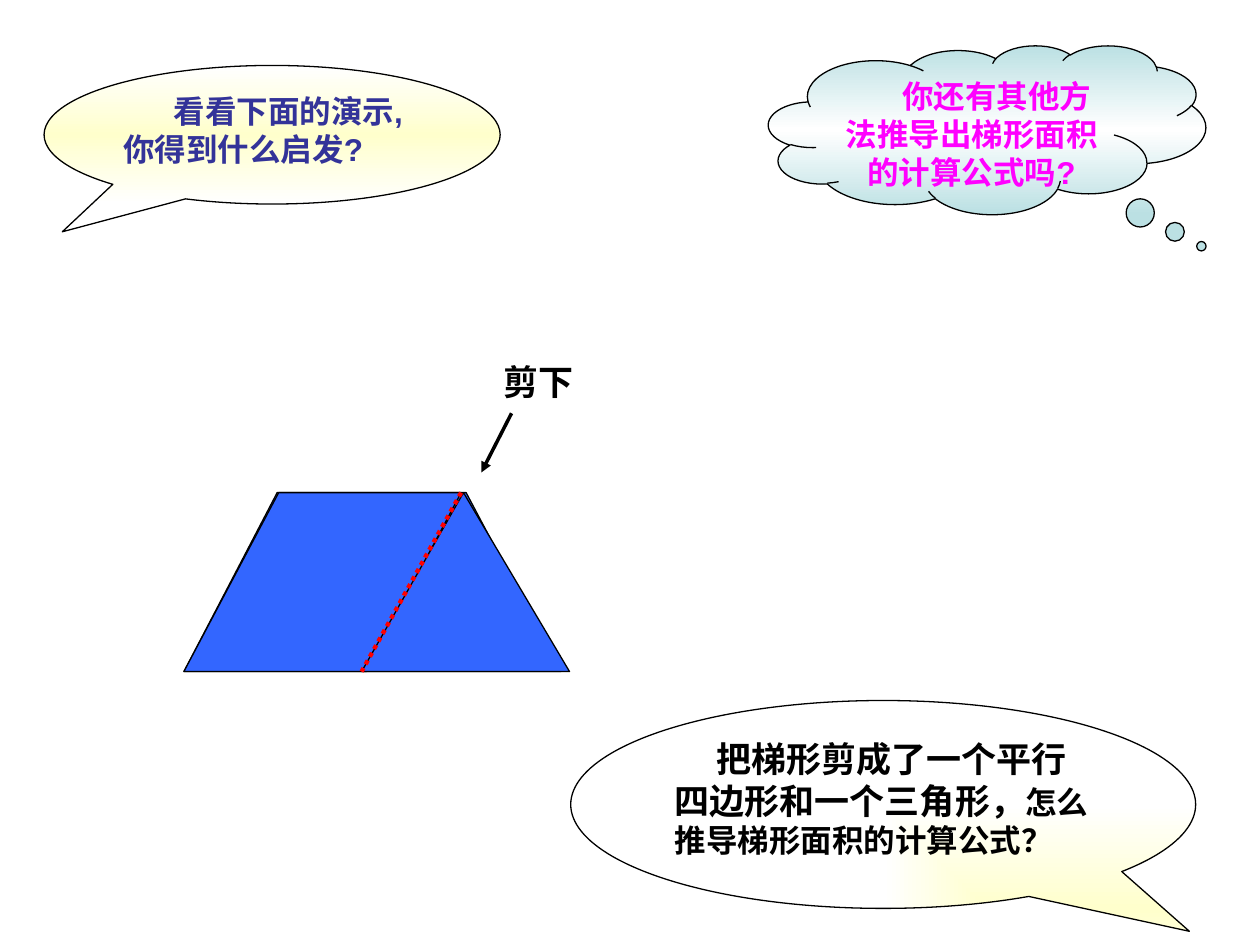
from dataclasses import dataclass

from lxml import etree
from pptx import Presentation
from pptx.dml.color import RGBColor
from pptx.enum.dml import MSO_LINE_DASH_STYLE
from pptx.enum.shapes import MSO_CONNECTOR_TYPE, MSO_SHAPE
from pptx.enum.text import MSO_ANCHOR, MSO_AUTO_SIZE, PP_ALIGN
from pptx.oxml.ns import qn
from pptx.util import Inches, Pt

CLOUD = MSO_SHAPE.CLOUD_CALLOUT
SPEECH = MSO_SHAPE.OVAL_CALLOUT
PARALLELOGRAM = MSO_SHAPE.PARALLELOGRAM
TRIANGLE = MSO_SHAPE.ISOSCELES_TRIANGLE
STRAIGHT = MSO_CONNECTOR_TYPE.STRAIGHT
DOTTED = MSO_LINE_DASH_STYLE.ROUND_DOT
TOP = MSO_ANCHOR.TOP
LEFT = PP_ALIGN.LEFT
CENTER = PP_ALIGN.CENTER
FIT_TEXT = MSO_AUTO_SIZE.SHAPE_TO_FIT_TEXT


@dataclass(frozen=True)
class Theme:
    font: str = "Arial"
    black: str = "000000"
    white: str = "FFFFFF"
    cream: str = "FFFFCC"
    sky: str = "BBE0E3"
    magenta: str = "FF00FF"
    indigo: str = "333399"
    blue: str = "3366FF"
    red: str = "FF0000"
    text: int = 18
    large: int = 20
    outline: float = 0.75
    arrow: float = 2
    cut: float = 2.5


class LessonSlide:
    """Draws styled lesson elements on one slide."""

    def __init__(self, slide, theme):
        self.shapes = slide.shapes
        self.theme = theme

    def outline(self, shape):
        shape.shadow.inherit = False
        shape.line.color.rgb = RGBColor.from_string(self.theme.black)
        shape.line.width = Pt(self.theme.outline)

    def paint(self, shape, color):
        shape.fill.solid()
        shape.fill.fore_color.rgb = RGBColor.from_string(color)
        self.outline(shape)

    def gradient(self, shape, colors, from_corner):
        shape.fill.gradient()
        fill = shape._element.spPr.find(qn("a:gradFill"))
        for child in list(fill):
            fill.remove(child)
        stops = etree.SubElement(fill, qn("a:gsLst"))
        for index, color in enumerate(colors):
            position = 100000 * index // (len(colors) - 1)
            stop = etree.SubElement(stops, qn("a:gs"), pos=str(position))
            etree.SubElement(stop, qn("a:srgbClr"), val=color)
        if from_corner:
            shade = etree.SubElement(fill, qn("a:path"), {"path": "rect"})
            etree.SubElement(shade, qn("a:fillToRect"), l="100000", t="100000")
        else:
            etree.SubElement(fill, qn("a:lin"), ang="5400000", scaled="1")

    def add_words(self, frame, runs, color, align=LEFT, indent=0.0):
        frame.word_wrap = True
        frame.vertical_anchor = TOP
        paragraph = frame.paragraphs[0]
        paragraph.alignment = align
        paragraph._p.get_or_add_pPr().set("indent", str(Inches(indent)))
        for words, size in runs:
            run = paragraph.add_run()
            run.text = words
            run.font.name = self.theme.font
            run.font.size = Pt(size)
            run.font.bold = True
            run.font.color.rgb = RGBColor.from_string(color)

    def preset(self, kind, box, adjustments):
        shape = self.shapes.add_shape(kind, *map(Inches, box))
        for index, value in enumerate(adjustments):
            shape.adjustments[index] = value
        return shape

    def callout(self, kind, box, pointer, colors, runs, color,
                align=LEFT, indent=0.4, from_corner=False):
        bubble = self.preset(kind, box, pointer)
        self.gradient(bubble, colors, from_corner)
        self.outline(bubble)
        self.add_words(bubble.text_frame, runs, color, align, indent)

    def piece(self, kind, box, adjustment):
        self.paint(self.preset(kind, box, [adjustment]), self.theme.blue)

    def polygon(self, points):
        start, *corners = [(Inches(x), Inches(y)) for x, y in points]
        builder = self.shapes.build_freeform(*start)
        builder.add_line_segments(corners, close=True)
        self.paint(builder.convert_to_shape(), self.theme.blue)

    def line(self, start, end, color, width, dash=None, arrow=False):
        connector = self.shapes.add_connector(STRAIGHT, *map(Inches, start + end))
        connector.line.color.rgb = RGBColor.from_string(color)
        connector.line.width = Pt(width)
        if dash is not None:
            connector.line.dash_style = dash
        properties = connector._element.spPr
        if arrow:
            etree.SubElement(properties.get_or_add_ln(), qn("a:tailEnd"), type="triangle")
        etree.SubElement(properties, qn("a:effectLst"))

    def label(self, box, words):
        caption = self.shapes.add_textbox(*map(Inches, box)).text_frame
        self.add_words(caption, [(words, self.theme.large)], self.theme.black)
        caption.auto_size = FIT_TEXT


def main():
    theme = Theme()
    presentation = Presentation()
    presentation.slide_width = Inches(10)
    presentation.slide_height = Inches(7.5)
    lesson = LessonSlide(presentation.slides.add_slide(presentation.slide_layouts[6]), theme)

    lesson.callout(CLOUD, (6.1, 0.36, 3.47, 1.34), (0.49, 0.69),
                   (theme.sky, theme.white, theme.sky),
                   [("你还有其他方法推导出梯形面积的计算公式吗?", theme.text)],
                   theme.magenta, align=CENTER)
    lesson.callout(SPEECH, (0.35, 0.52, 3.62, 1.1), (-0.46, 0.7),
                   (theme.white, theme.cream, theme.white),
                   [("看看下面的演示,你得到什么启发?", theme.text)], theme.indigo)

    left, top, height = 1.46, 3.91, 1.42
    bottom = top + height
    cut_top, cut_bottom = 3.66, 2.87
    lesson.polygon([(left, bottom), (2.2, top), (3.7, top), (4.45, bottom)])
    lesson.piece(PARALLELOGRAM, (left, top, cut_top - left, height), 0.53)
    lesson.piece(TRIANGLE, (cut_bottom, top, 1.65, height), 0.49)
    lesson.line((cut_top, top), (cut_bottom, bottom), theme.red, theme.cut, dash=DOTTED)

    lesson.callout(SPEECH, (4.53, 5.56, 4.96, 1.65), (0.49, 0.61),
                   (theme.cream, theme.white),
                   [("把梯形剪成了一个平行四边形和一个三角形，", theme.large),
                    ("怎么推导梯形面积的计算公式？", theme.text)],
                   theme.black, indent=0.33, from_corner=True)
    lesson.label((3.9, 2.81, 1.34, 0.43), "剪下")
    lesson.line((4.06, 3.28), (3.82, 3.75), theme.black, theme.arrow, arrow=True)

    presentation.save("out.pptx")


if __name__ == "__main__":
    main()
